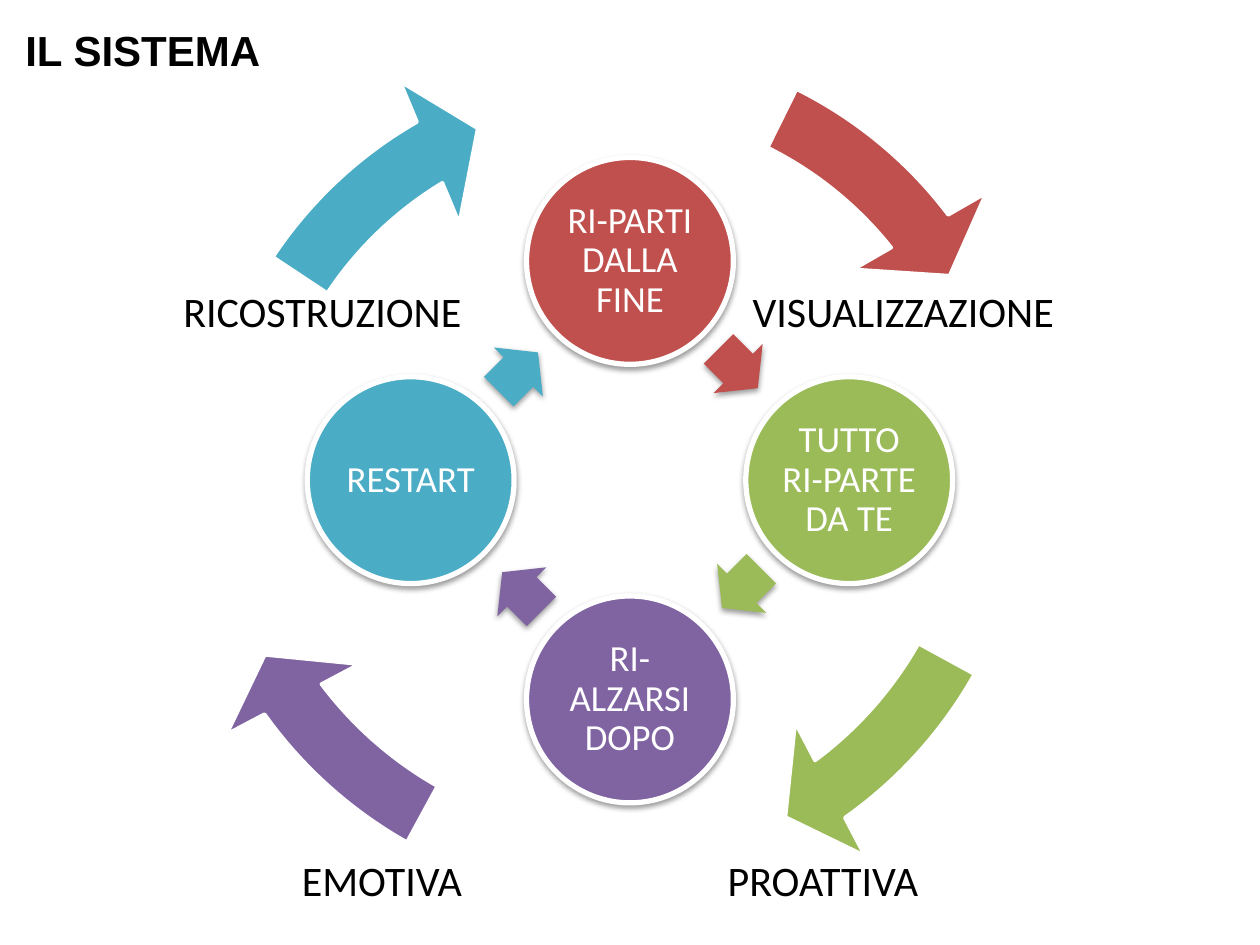
from lxml import etree
from pptx import Presentation
from pptx.dml.color import RGBColor
from pptx.enum.shapes import MSO_SHAPE
from pptx.enum.text import MSO_ANCHOR, PP_ALIGN
from pptx.oxml.ns import qn
from pptx.util import Cm, Pt

OVAL, ARROW, RING_ARROW = MSO_SHAPE.OVAL, MSO_SHAPE.RIGHT_ARROW, MSO_SHAPE.CIRCULAR_ARROW
CENTER, MIDDLE = PP_ALIGN.CENTER, MSO_ANCHOR.MIDDLE

COLORS = {"red": "C0504D", "green": "9BBB59", "purple": "8064A2", "blue": "4BACC6",
          "white": "FFFFFF", "black": "000000"}

TITLE = "IL SISTEMA"
STEPS = [
    ("RI-PARTI DALLA FINE", "red"),
    ("TUTTO RI-PARTE DA TE", "green"),
    ("RI-ALZARSI DOPO", "purple"),
    ("RESTART", "blue"),
]
PHASES = [
    ("VISUALIZZAZIONE", (18.21, 6.27), "red", (2.74, 0, 19.0, 19.05), 313.2, (5.49, 205.86)),
    ("PROATTIVA", (16.59, 17.73), "green", (2.69, 0.23, 19.05, 18.62), 315.5, (59.49, 43.86)),
    ("EMOTIVA", (7.7, 17.73), "purple", (2.95, 0.03, 18.59, 19.05), 315.2, (113.52, 98.02)),
    ("RICOSTRUZIONE", (6.5, 6.27), "blue", (3.18, 0.43, 19.05, 19.05), 320.7, (167.33, 151.7)),
]

CYCLE_CENTER = (12.7, 9.68)
CIRCLE_OFFSET, CIRCLE_SIZE = (0, -4.42), 4.17
ARROW_OFFSET, ARROW_WIDTH, ARROW_HEIGHT = (2.18, -2.25), 1.12, 1.4
LABEL_WIDTH, LABEL_HEIGHT = 7.6, 1.2
INSET = 0.08


def color(name):
    return RGBColor.from_string(COLORS[name])


def quarter_turns(offset, turns):
    x, y = offset
    for _ in range(turns):
        x, y = -y, x
    return CYCLE_CENTER[0] + x, CYCLE_CENTER[1] + y


def box_around(center, width, height):
    return center[0] - width / 2, center[1] - height / 2, width, height


def write(shape, text, size, font_name, color_name, bold=False, spacing=1.0):
    frame = shape.text_frame
    frame.text = text
    frame.word_wrap = True
    frame.vertical_anchor = MIDDLE
    frame.margin_left = frame.margin_right = frame.margin_top = frame.margin_bottom = Cm(INSET)
    paragraph = frame.paragraphs[0]
    paragraph.alignment = CENTER
    paragraph.line_spacing = spacing
    font = paragraph.runs[0].font
    font.size, font.name, font.bold = Pt(size), font_name, bold
    font.color.rgb = color(color_name)


def add_text(slide, box, *style, **options):
    write(slide.shapes.add_textbox(*map(Cm, box)), *style, **options)


def add_figure(slide, kind, box, fill, line_width=0, rotation=0, adjustments=()):
    shape = slide.shapes.add_shape(kind, *map(Cm, box))
    shape.shadow.inherit = False
    shape.rotation = rotation
    shape.fill.solid()
    shape.fill.fore_color.rgb = color(fill)
    if line_width:
        shape.line.color.rgb = color("white")
        shape.line.width = Pt(line_width)
    else:
        shape.line.fill.background()
    for index, value in enumerate(adjustments):
        shape.adjustments[index] = value
    return shape


def add_shadow(shape):
    effects = shape._element.spPr.find(qn("a:effectLst"))
    shadow = etree.SubElement(effects, qn("a:outerShdw"), blurRad="40000", dist="20000",
                              dir="5400000", rotWithShape="0")
    shade = etree.SubElement(shadow, qn("a:srgbClr"), val=COLORS["black"])
    etree.SubElement(shade, qn("a:alpha"), val="38000")


def main():
    presentation = Presentation()
    presentation.slide_width, presentation.slide_height = Cm(25.4), Cm(19.05)
    slide = presentation.slides.add_slide(presentation.slide_layouts[6])

    add_text(slide, (0.05, 0.36, 5.66, 1.27), TITLE, 24, "Arial", "black", bold=True)

    for turn, (text, fill) in enumerate(STEPS):
        center = quarter_turns(CIRCLE_OFFSET, turn)
        circle = add_figure(slide, OVAL, box_around(center, CIRCLE_SIZE, CIRCLE_SIZE), fill, 3)
        write(circle, text, 21, "Calibri", "white", spacing=0.9)
        center = quarter_turns(ARROW_OFFSET, turn)
        arrow = add_figure(slide, ARROW, box_around(center, ARROW_WIDTH, ARROW_HEIGHT), fill,
                           rotation=45 + 90 * turn, adjustments=(0.6, 0.5))
        add_shadow(circle)
        add_shadow(arrow)

    for text, center, fill, ring, rotation, (end, start) in PHASES:
        add_text(slide, box_around(center, LABEL_WIDTH, LABEL_HEIGHT), text, 24, "Calibri", "black")
        add_figure(slide, RING_ARROW, ring, fill, 2, rotation, (0.069, 4.655, end, start, 0.081))

    presentation.save("out.pptx")


if __name__ == "__main__":
    main()
